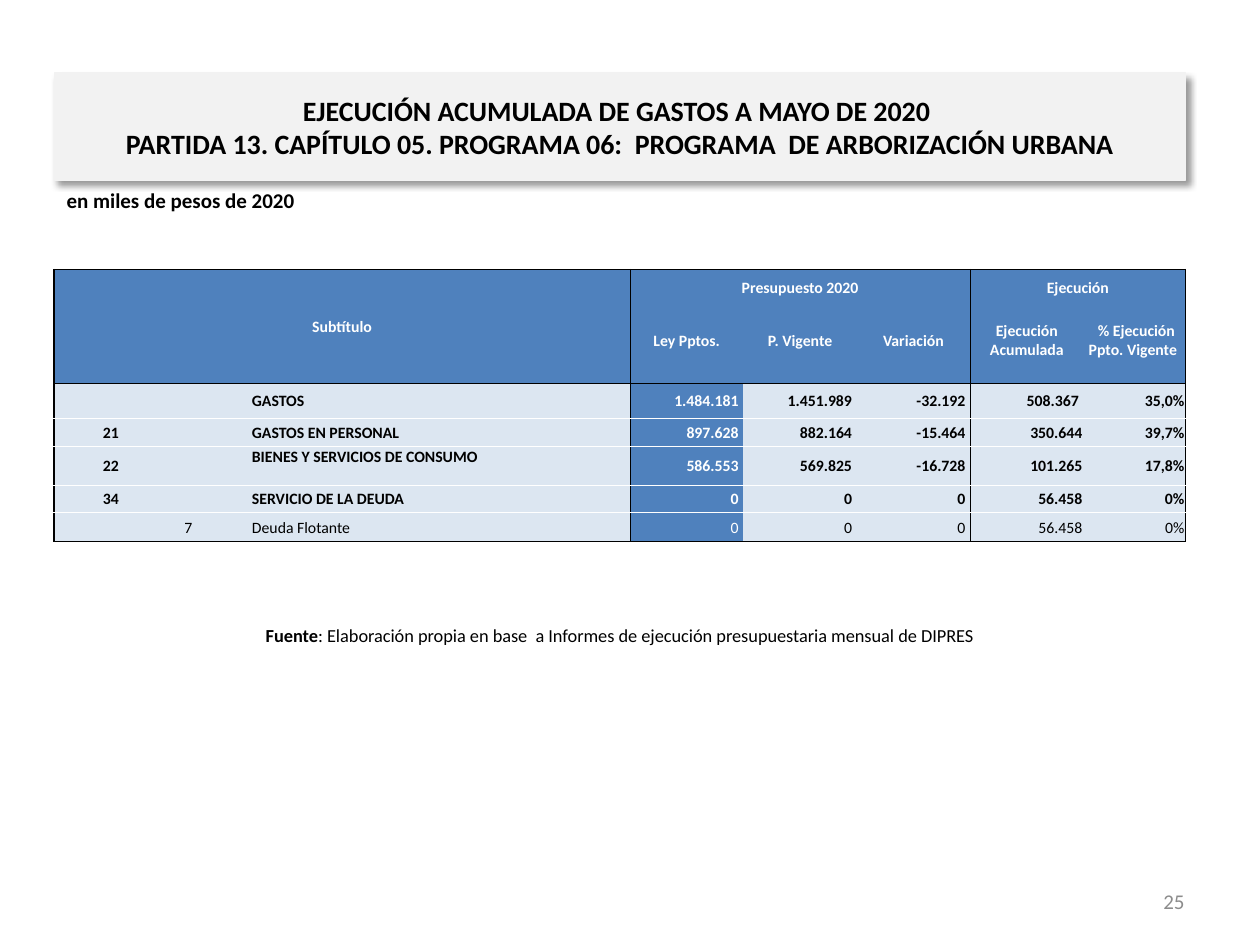
"""Build the budget execution slide with its title, expense table and source note."""
from dataclasses import dataclass

from lxml import etree
from pptx import Presentation
from pptx.dml.color import RGBColor
from pptx.enum.shapes import MSO_SHAPE
from pptx.enum.text import MSO_ANCHOR, PP_ALIGN
from pptx.oxml.ns import qn
from pptx.util import Inches, Pt

LEFT, CENTER, RIGHT, JUSTIFY = PP_ALIGN.LEFT, PP_ALIGN.CENTER, PP_ALIGN.RIGHT, PP_ALIGN.JUSTIFY
TOP, MIDDLE, BOTTOM = MSO_ANCHOR.TOP, MSO_ANCHOR.MIDDLE, MSO_ANCHOR.BOTTOM
RECTANGLE = MSO_SHAPE.RECTANGLE

BLACK = RGBColor(0x00, 0x00, 0x00)
WHITE = RGBColor(0xFF, 0xFF, 0xFF)
GRAY = RGBColor(0x8C, 0x8C, 0x8C)
PANEL = RGBColor(0xF2, 0xF2, 0xF2)
BLUE = RGBColor(0x4F, 0x81, 0xBD)
PALE = RGBColor(0xDC, 0xE6, 0xF1)

FONT = "Calibri"
MARGIN, WIDTH = 0.43, 8.98
COLS = [0.9, 0.33, 0.33, 3.01, 0.9, 0.9, 0.9, 0.9, 0.81]
ROWS = [0.22, 0.68, 0.28, 0.22, 0.31, 0.22, 0.23]
LAW_COL, EXEC_COL = 4, 7
HEADER_ROWS = 2
LAST_ROW, LAST_COL = len(ROWS) - 1, len(COLS) - 1
GROUPS = [
    (0, 0, 1, 3, "Subtítulo", MIDDLE),
    (0, LAW_COL, 0, EXEC_COL - 1, "Presupuesto 2020", BOTTOM),
    (0, EXEC_COL, 0, LAST_COL, "Ejecución", BOTTOM),
]
HEADINGS = ["Ley Pptos.", "P. Vigente", "Variación", "Ejecución Acumulada",
            " % Ejecución Ppto. Vigente "]


@dataclass
class Expense:
    name: str
    values: list[str]
    subtitle: str = ""
    item: str = ""
    bold: bool = True
    anchor: MSO_ANCHOR = MIDDLE


EXPENSES = [
    Expense("GASTOS", ["1.484.181 ", "1.451.989 ", "-32.192 ", "508.367 ", "35,0%"]),
    Expense("GASTOS EN PERSONAL", ["897.628 ", "882.164 ", "-15.464 ", "350.644", "39,7%"], "21"),
    Expense("BIENES Y SERVICIOS DE CONSUMO",
            ["586.553 ", "569.825 ", "-16.728 ", "101.265", "17,8%"], "22", anchor=TOP),
    Expense("SERVICIO DE LA DEUDA", ["0 ", "0 ", "0 ", "56.458", "0%"], "34"),
    Expense("Deuda Flotante", ["0 ", "0 ", "0 ", "56.458", "0%"], item="7", bold=False),
]


def add_run(p, text: str, size: float, color: RGBColor = BLACK, bold: bool = False) -> None:
    r = p.add_run()
    r.text = text
    r.font.name, r.font.size, r.font.bold = FONT, Pt(size), bold
    r.font.color.rgb = color


def add_text(s, box: tuple, runs: list[tuple[str, bool]], size: float,
             color: RGBColor = BLACK, align: PP_ALIGN = LEFT, anchor: MSO_ANCHOR = MIDDLE) -> None:
    tf = s.shapes.add_textbox(*map(Inches, box)).text_frame
    tf.word_wrap, tf.vertical_anchor = True, anchor
    p = tf.paragraphs[0]
    p.alignment = align
    for text, bold in runs:
        add_run(p, text, size, color, bold)


def add_title(s, lines: list[str]) -> None:
    sp = s.shapes.add_shape(RECTANGLE, Inches(MARGIN), Inches(0.58), Inches(WIDTH), Inches(0.85))
    sp.fill.solid()
    sp.fill.fore_color.rgb = PANEL
    sp.line.color.rgb, sp.line.width = PANEL, Pt(0.75)
    sp.shadow.inherit = False
    effects = sp._element.spPr.find(qn("a:effectLst"))
    shadow = etree.SubElement(effects, qn("a:outerShdw"), blurRad=str(Pt(4)), dist=str(Pt(3)),
                              dir="2700000", algn="tl", rotWithShape="0")
    tint = etree.SubElement(shadow, qn("a:srgbClr"), val=str(BLACK))
    etree.SubElement(tint, qn("a:alpha"), val="40000")
    tf = sp.text_frame
    tf.word_wrap, tf.vertical_anchor = True, MIDDLE
    p = tf.paragraphs[0]
    p.alignment = CENTER
    for i, line in enumerate(lines):
        if i:
            p.add_line_break()
        add_run(p, line, 16, bold=True)


def add_border(cell, side: str, line: tuple[RGBColor, float] | None) -> None:
    ln = etree.SubElement(cell._tc.get_or_add_tcPr(), qn(f"a:ln{side}"))
    if line is None:
        etree.SubElement(ln, qn("a:noFill"))
        return
    color, width = line
    ln.set("w", str(Pt(width)))
    etree.SubElement(etree.SubElement(ln, qn("a:solidFill")), qn("a:srgbClr"), val=str(color))


def column_line(edge: int) -> tuple[RGBColor, float] | None:
    if edge in (0, LAST_COL + 1):
        return BLACK, 1
    return (BLACK, 0.5) if edge in (LAW_COL, EXEC_COL) else None


def row_line(edge: int) -> tuple[RGBColor, float] | None:
    if edge in (0, LAST_ROW + 1):
        return BLACK, 1
    if edge == HEADER_ROWS:
        return BLACK, 0.5
    return (WHITE, 0.5) if edge > HEADER_ROWS else None


def style_cell(cell, row: int, col: int) -> None:
    add_border(cell, "L", column_line(col))
    add_border(cell, "R", column_line(col + cell.span_width))
    add_border(cell, "T", row_line(row))
    add_border(cell, "B", row_line(row + cell.span_height))
    cell.fill.solid()
    cell.fill.fore_color.rgb = BLUE if row < HEADER_ROWS or col == LAW_COL else PALE
    cell.margin_left = cell.margin_right = cell.margin_top = Inches(0.01)
    cell.margin_bottom = 0
    cell.text_frame.paragraphs[0]._p.get_or_add_endParaRPr().set("sz", "900")


def fill_cell(cell, text: str, align: PP_ALIGN, color: RGBColor = WHITE,
              bold: bool = True, anchor: MSO_ANCHOR = MIDDLE) -> None:
    cell.vertical_anchor = anchor
    p = cell.text_frame.paragraphs[0]
    p.alignment = align
    if text:
        add_run(p, text, 9, color, bold)


def add_expense_table(s) -> None:
    frame = s.shapes.add_table(len(ROWS), len(COLS), Inches(MARGIN), Inches(2.14),
                               Inches(WIDTH), Inches(sum(ROWS)))
    table = frame.table
    table.first_row = table.horz_banding = False
    for column, width in zip(table.columns, COLS):
        column.width = Inches(width)
    for row, height in zip(table.rows, ROWS):
        row.height = Inches(height)
    for top, left, bottom, right, text, anchor in GROUPS:
        table.cell(top, left).merge(table.cell(bottom, right))
        fill_cell(table.cell(top, left), text, CENTER, anchor=anchor)
    for col, heading in enumerate(HEADINGS, LAW_COL):
        fill_cell(table.cell(1, col), heading, CENTER)
    for row, e in enumerate(EXPENSES, HEADER_ROWS):
        fill_cell(table.cell(row, 0), e.subtitle, CENTER, BLACK, e.bold)
        fill_cell(table.cell(row, 1), e.item, CENTER, BLACK, e.bold)
        fill_cell(table.cell(row, 3), e.name, JUSTIFY, BLACK, e.bold, e.anchor)
        for col, value in enumerate(e.values, LAW_COL):
            fill_cell(table.cell(row, col), value, RIGHT, WHITE if col == LAW_COL else BLACK, e.bold)
    for row in range(len(ROWS)):
        for col in range(len(COLS)):
            style_cell(table.cell(row, col), row, col)


def main() -> None:
    prs = Presentation()
    prs.slide_width, prs.slide_height = Inches(10), Inches(7.5)
    s = prs.slides.add_slide(prs.slide_layouts[6])
    source = ": Elaboración propia en base  a Informes de ejecución presupuestaria mensual de DIPRES"
    add_text(s, (MARGIN, 4.87, WIDTH, 0.34), [("Fuente", True), (source, False)], 10.5, align=CENTER)
    add_text(s, (7.17, 6.95, 2.33, 0.4), [("25", False)], 12, GRAY, RIGHT)
    add_text(s, (MARGIN, 1.44, 8.19, 0.34), [("en miles de pesos de 2020", True)], 12, anchor=TOP)
    add_title(s, ["EJECUCIÓN ACUMULADA DE GASTOS A MAYO DE 2020 ",
                  "PARTIDA 13. CAPÍTULO 05. PROGRAMA 06:  PROGRAMA  DE ARBORIZACIÓN URBANA"])
    add_expense_table(s)
    prs.save("out.pptx")


if __name__ == "__main__":
    main()
